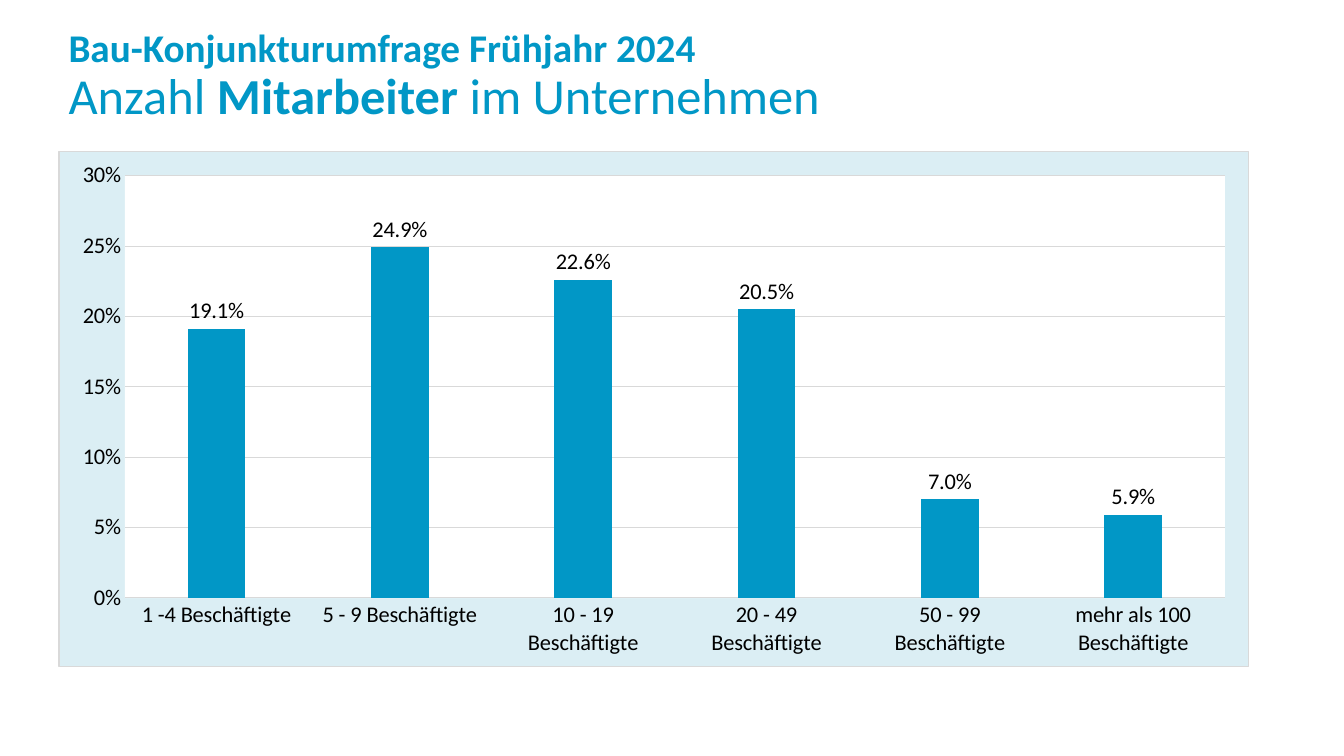
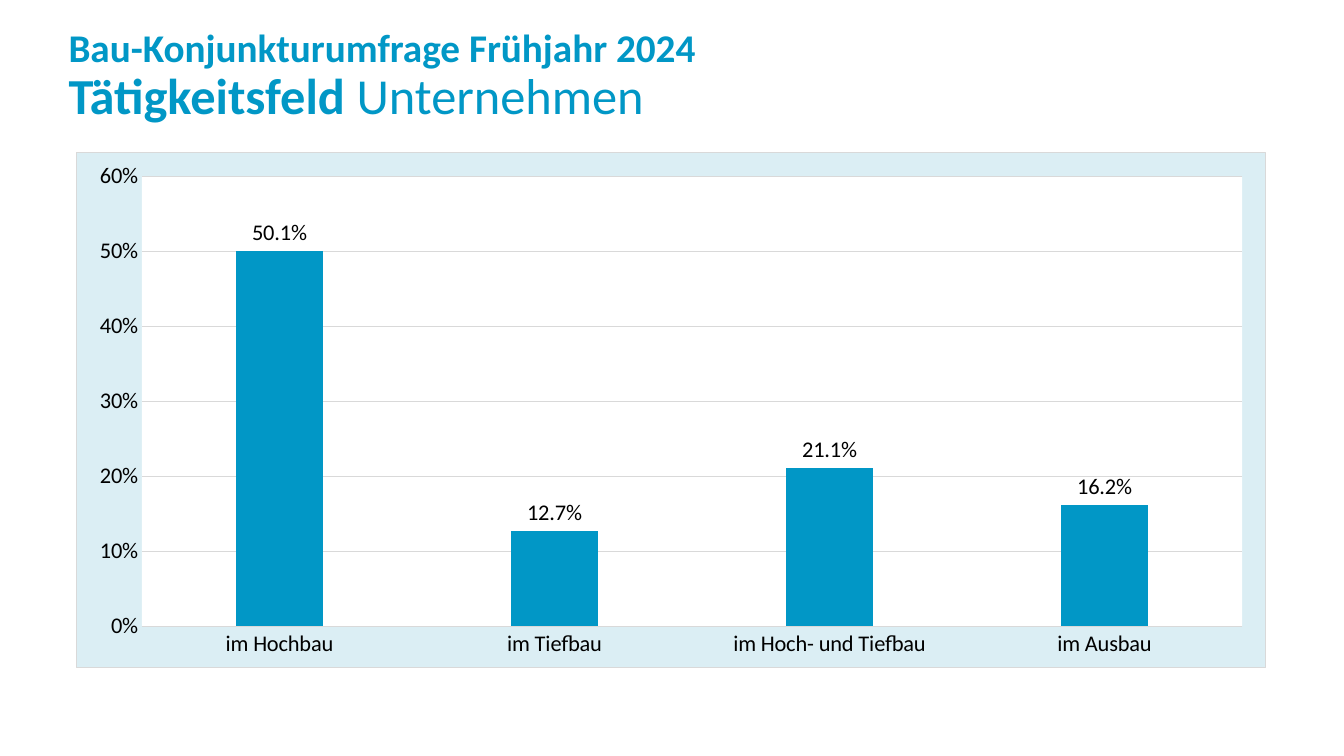
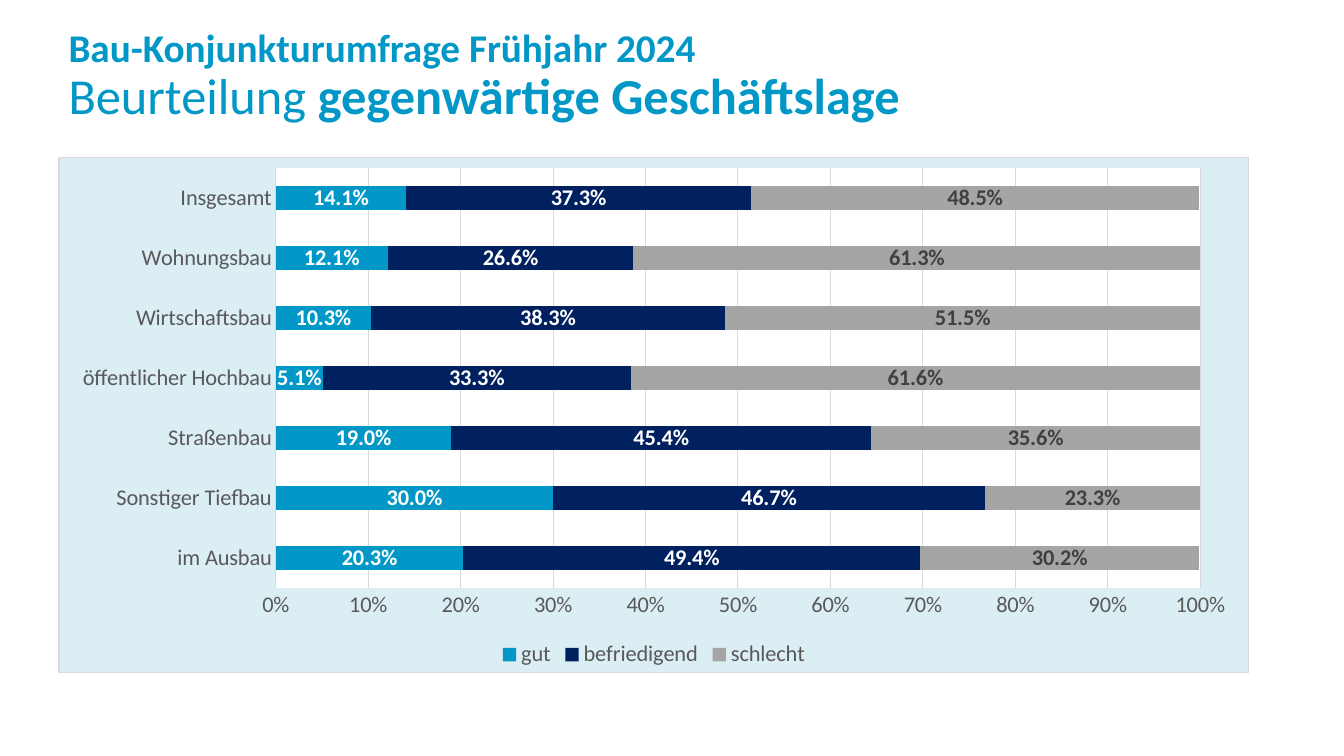
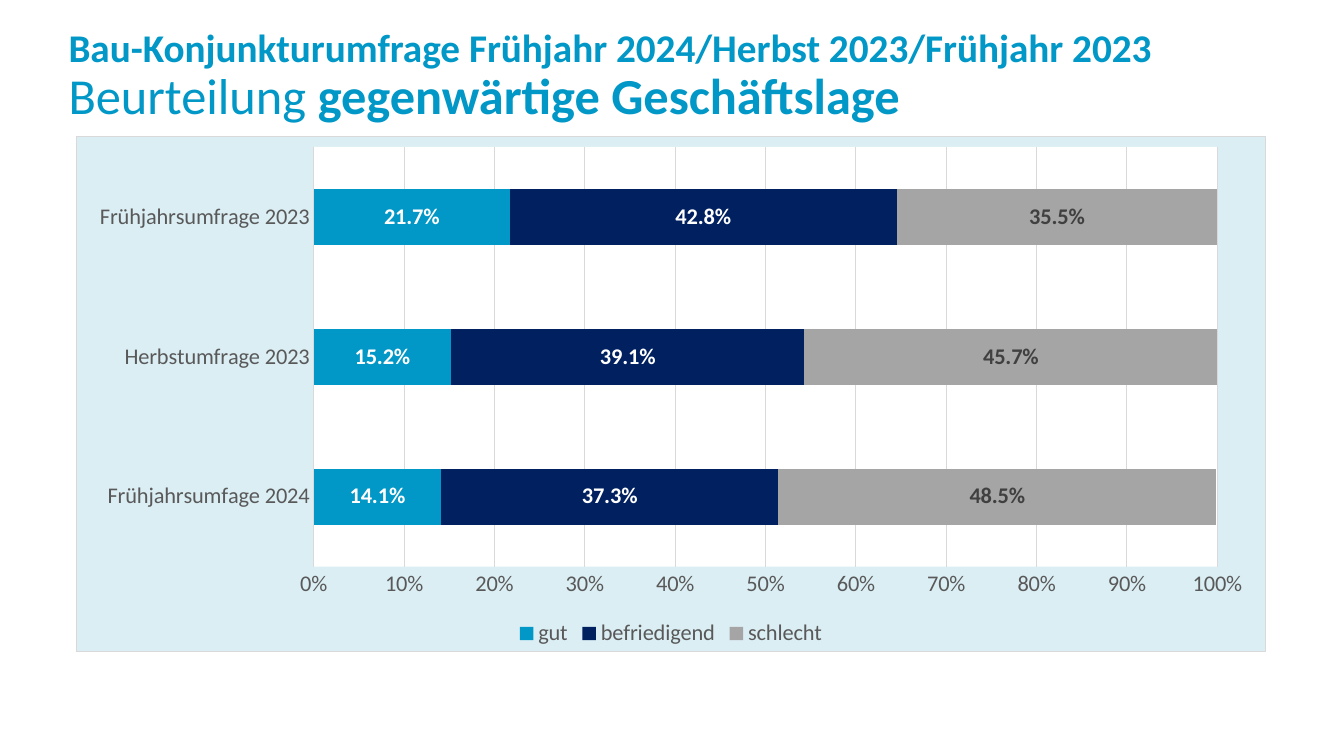
from lxml import etree
from pptx import Presentation
from pptx import util as u
from pptx.chart import data as chart_data
from pptx.dml.color import RGBColor
from pptx.enum import chart as charts, text
from pptx.oxml import ns

BLUE = RGBColor(0x01, 0x97, 0xC6)
NAVY = RGBColor(0x00, 0x20, 0x60)
GRAY = RGBColor(0xA5, 0xA5, 0xA5)
PALE_BLUE = RGBColor(0xDB, 0xEE, 0xF4)
LINE_GRAY = RGBColor(0xD9, 0xD9, 0xD9)
TEXT_GRAY = RGBColor(0x59, 0x59, 0x59)
DARK_GRAY = RGBColor(0x40, 0x40, 0x40)
BLACK = RGBColor(0, 0, 0)
WHITE = RGBColor(0xFF, 0xFF, 0xFF)


def style_font(font, color, size=16, bold=False):
    for name, value in {"name": "Calibri", "size": u.Pt(size), "bold": bold}.items():
        setattr(font, name, value)
    font.color.rgb = color


def area_format(fill, border=None):
    """Shape properties for a chart background, which has no public method."""
    line = f'<a:solidFill><a:srgbClr val="{border}"/></a:solidFill>' if border else "<a:noFill/>"
    return etree.fromstring(
        f'<c:spPr {ns.nsdecls("c", "a")}><a:solidFill><a:srgbClr val="{fill}"/></a:solidFill>'
        f'<a:ln w="9525">{line}</a:ln></c:spPr>')


# Slide content
SURVEY = "Bau-Konjunkturumfrage Frühjahr 2024"
SITUATION = [("Beurteilung ", False), ("gegenwärtige Geschäftslage", True)]

# Kinds of chart
COLUMNS = {
    "type": charts.XL_CHART_TYPE.COLUMN_CLUSTERED, "gap": 219, "overlap": -27,
    "axis_color": BLACK, "legend": False,
    "label_position": charts.XL_LABEL_POSITION.OUTSIDE_END,
    "series": [("Series 1", BLUE, BLACK, False)],
}
STACKED_BARS = {
    "type": charts.XL_CHART_TYPE.BAR_STACKED, "gap": 150, "overlap": 100,
    "axis_color": TEXT_GRAY, "legend": True,
    "label_position": charts.XL_LABEL_POSITION.CENTER,
    "series": [("gut", BLUE, WHITE, True), ("befriedigend", NAVY, WHITE, True),
               ("schlecht", GRAY, DARK_GRAY, True)],
}

SLIDES = [
    {"survey": SURVEY,
     "topic": [("Anzahl ", False), ("Mitarbeiter", True), (" im Unternehmen", False)],
     "kind": COLUMNS, "left": 0.58, "top": 1.5, "maximum": 0.3, "unit": 0.05,
     "rows": {"1 -4 Beschäftigte": [0.191], "5 - 9 Beschäftigte": [0.249],
              "10 - 19 Beschäftigte": [0.226], "20 - 49 Beschäftigte": [0.205],
              "50 - 99 Beschäftigte": [0.07], "mehr als 100 Beschäftigte": [0.059]}},
    {"survey": SURVEY,
     "topic": [("Tätigkeitsfeld ", True), ("Unternehmen", False)],
     "kind": COLUMNS, "left": 0.75, "top": 1.51, "maximum": 0.6, "unit": 0.1,
     "rows": {"im Hochbau": [0.501], "im Tiefbau": [0.127],
              "im Hoch- und Tiefbau": [0.211], "im Ausbau": [0.162]}},
    {"survey": SURVEY, "topic": SITUATION,
     "kind": STACKED_BARS, "left": 0.58, "top": 1.56, "maximum": 1, "unit": 0.1,
     "rows": {"im Ausbau": [0.203, 0.494, 0.302],
              "Sonstiger Tiefbau": [0.3, 0.467, 0.233],
              "Straßenbau": [0.19, 0.454, 0.356],
              "öffentlicher Hochbau": [0.051, 0.333, 0.616],
              "Wirtschaftsbau": [0.103, 0.383, 0.515],
              "Wohnungsbau": [0.121, 0.266, 0.613],
              "Insgesamt": [0.141, 0.373, 0.485]}},
    {"survey": SURVEY + "/Herbst 2023/Frühjahr 2023", "topic": SITUATION,
     "kind": STACKED_BARS, "left": 0.75, "top": 1.35, "maximum": 1, "unit": 0.1,
     "rows": {"Frühjahrsumfage 2024": [0.141, 0.373, 0.485],
              "Herbstumfrage 2023": [0.152, 0.391, 0.457],
              "Frühjahrsumfrage 2023": [0.217, 0.428, 0.355]}},
]

presentation = Presentation()
presentation.slide_width = u.Inches(13.33)
presentation.slide_height = u.Inches(7.5)

# Shared title position, inherited by every slide
layout = presentation.slide_layouts.get_by_name("Title Only")
layout_title = layout.placeholders[0]
for name, value in {"left": 0.58, "top": 0.17, "width": 12.15, "height": 1.18}.items():
    setattr(layout_title, name, u.Inches(value))

for content in SLIDES:
    slide = presentation.slides.add_slide(layout)
    kind = content["kind"]

    # Title: survey name above the topic
    frame = slide.shapes.title.text_frame
    frame.auto_size = text.MSO_AUTO_SIZE.NONE
    frame.vertical_anchor = text.MSO_ANCHOR.MIDDLE
    paragraph = frame.paragraphs[0]
    paragraph.alignment = text.PP_ALIGN.LEFT
    paragraph.line_spacing = 0.9
    run = paragraph.add_run()
    run.text = content["survey"]
    style_font(run.font, BLUE, 28, True)
    paragraph.add_line_break()
    for words, bold in content["topic"]:
        run = paragraph.add_run()
        run.text = words
        style_font(run.font, BLUE, 36, bold)

    # Chart data
    data = chart_data.CategoryChartData(number_format="0.0%")
    data.categories = list(content["rows"])
    for (name, *_), values in zip(kind["series"], zip(*content["rows"].values())):
        data.add_series(name, values)
    chart = slide.shapes.add_chart(
        kind["type"], u.Inches(content["left"]), u.Inches(content["top"]),
        u.Inches(11.81), u.Inches(5.12), data).chart

    # Chart text, legend and backgrounds
    chart.has_title = False
    style_font(chart.font, BLACK)
    chart.has_legend = kind["legend"]
    if chart.has_legend:
        chart.legend.position = charts.XL_LEGEND_POSITION.BOTTOM
        chart.legend.include_in_layout = False
        style_font(chart.legend.font, TEXT_GRAY)
    chart_element = chart.element.find(ns.qn("c:chart"))
    chart_element.addnext(area_format(PALE_BLUE, LINE_GRAY))
    chart_element.find(ns.qn("c:plotArea")).append(area_format(WHITE))

    # Axes
    category_axis, value_axis = chart.category_axis, chart.value_axis
    for axis in (category_axis, value_axis):
        axis.major_tick_mark = axis.minor_tick_mark = charts.XL_TICK_MARK.NONE
        style_font(axis.tick_labels.font, kind["axis_color"])
    value_axis.minimum_scale = 0
    value_axis.maximum_scale = content["maximum"]
    value_axis.major_unit = content["unit"]
    value_axis.tick_labels.number_format = "0%"
    value_axis.tick_labels.number_format_is_linked = False
    value_axis.format.line.fill.background()
    for line in (category_axis.format.line, value_axis.major_gridlines.format.line):
        line.color.rgb = LINE_GRAY
        line.width = u.Pt(0.75)

    # Series and their labels
    plot = chart.plots[0]
    plot.vary_by_categories = False
    plot.gap_width = kind["gap"]
    plot.overlap = kind["overlap"]
    for series, (_, color, label_color, bold) in zip(plot.series, kind["series"]):
        series.format.fill.solid()
        series.format.fill.fore_color.rgb = color
        labels = series.data_labels
        for name, value in {"show_value": True, "number_format": "0.0%",
                            "number_format_is_linked": False,
                            "position": kind["label_position"]}.items():
            setattr(labels, name, value)
        style_font(labels.font, label_color, bold=bold)

presentation.save("out.pptx")
